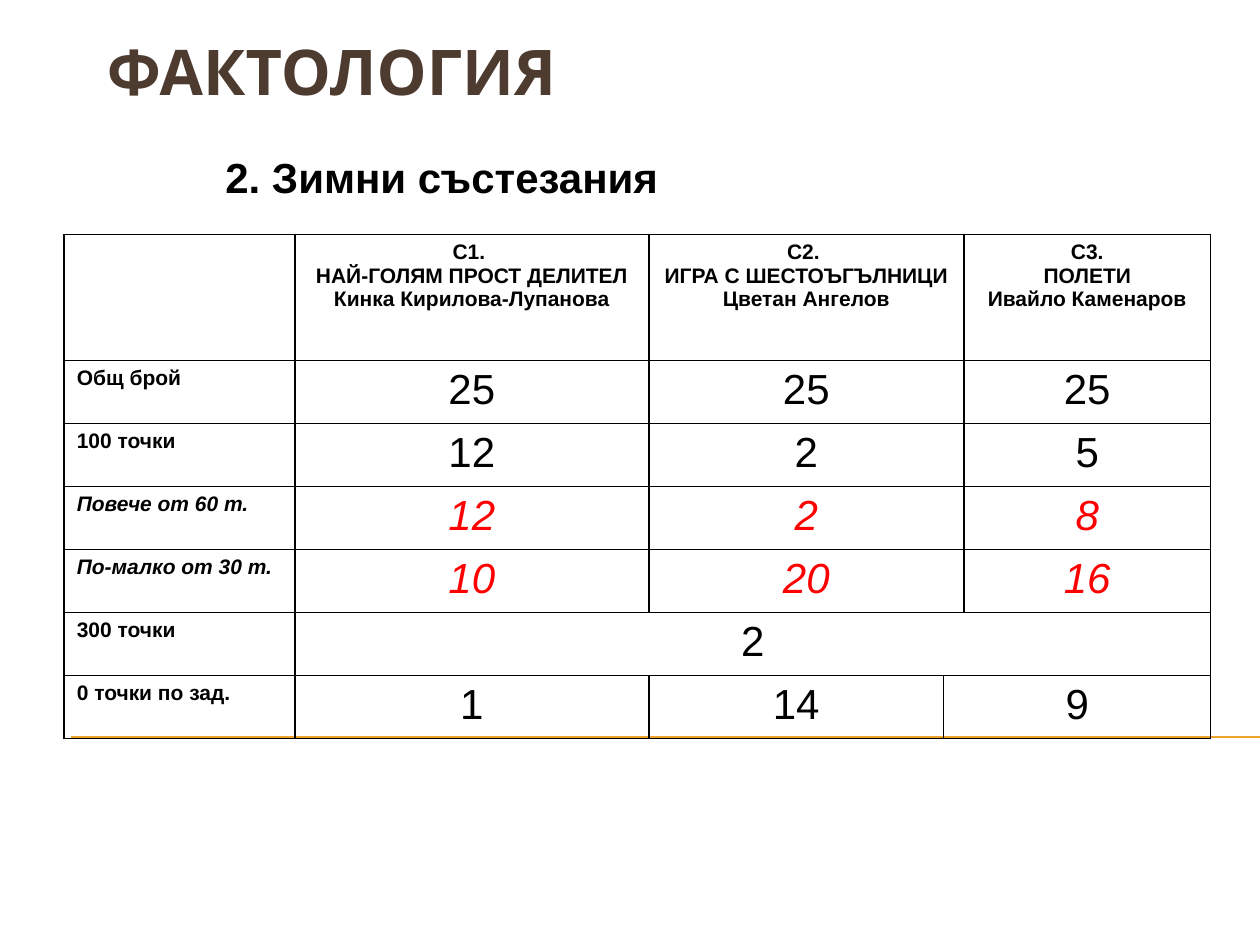
from lxml.etree import SubElement
from pptx import Presentation
from pptx.dml.color import RGBColor
from pptx.enum.shapes import MSO_CONNECTOR as Connector
from pptx.enum.text import MSO_ANCHOR as Anchor, PP_ALIGN as Align
from pptx.oxml.ns import qn
from pptx.util import Inches, Pt


def color(value):
    return RGBColor.from_string(value)


def write(frame, lines, text_color="000000", align=Align.LEFT, **formats):
    for index, line in enumerate(lines):
        paragraph = frame.add_paragraph() if index else frame.paragraphs[0]
        paragraph.alignment = align
        run = paragraph.add_run()
        run.text = line
        run.font.color.rgb = color(text_color)
        for name, value in formats.items():
            setattr(run.font, name, value)


presentation = Presentation()
presentation.slide_width, presentation.slide_height = Inches(10), Inches(7.5)
slide = presentation.slides.add_slide(presentation.slide_layouts[6])
slide.background.fill.solid()
slide.background.fill.fore_color.rgb = color("FFFFFF")

# Rule behind the table
rule = slide.shapes.add_connector(
    Connector.STRAIGHT, Inches(0.56), Inches(5.85), Inches(10), Inches(5.85))
rule.line.color.rgb = color("F0A22E")
rule.line.width = Pt(0.75)
SubElement(rule.line._get_or_add_ln().getparent(), qn("a:effectLst"))

# Title and subtitle
headings = [
    ("ФАКТОЛОГИЯ", (0.75, 0.21, 8.66, 1.02), True, Anchor.TOP, "4E3B30",
     {"name": "Karla", "size": Pt(36), "bold": True}),
    ("2. Зимни състезания", (1.69, 1.15, 3.67, 0.51), False, Anchor.MIDDLE, "000000",
     {"name": "Arial", "size": Pt(24), "bold": True}),
]
for text, box, wrap, anchor, text_color, formats in headings:
    shape = slide.shapes.add_textbox(*map(Inches, box))
    shape.text_frame.word_wrap = wrap
    shape.text_frame.vertical_anchor = anchor
    write(shape.text_frame, [text], text_color, **formats)

# Results table: the narrow fourth column shifts the divider in the last row
column_widths = [1.83, 2.81, 2.34, 0.16, 1.96]
row_heights = [1] + [0.5] * 6
tasks = {
    1: ["С1. ", "НАЙ-ГОЛЯМ ПРОСТ ДЕЛИТЕЛ", "Кинка Кирилова-Лупанова"],
    2: ["С2. ", "ИГРА С ШЕСТОЪГЪЛНИЦИ", "Цветан Ангелов"],
    4: ["С3.", "ПОЛЕТИ", "Ивайло Каменаров"],
}
results = [
    ("Общ брой", {1: "25", 2: "25", 4: "25"}, False),
    ("100 точки", {1: "12", 2: "2", 4: "5"}, False),
    ("Повече от 60 т.", {1: "12", 2: "2", 4: "8"}, True),
    ("По-малко от 30 т.", {1: "10", 2: "20", 4: "16"}, True),
    ("300 точки", {1: "2"}, False),
    ("0 точки по зад.", {1: "1", 2: "14", 3: "9"}, False),
]
table = slide.shapes.add_table(
    len(row_heights), len(column_widths), Inches(0.51), Inches(1.86),
    Inches(sum(column_widths)), Inches(sum(row_heights))).table
table.first_row = table.horz_banding = False
for column, width in zip(table.columns, column_widths):
    column.width = Inches(width)
for row, height in zip(table.rows, row_heights):
    row.height = Inches(height)

# Cell borders, then white-free fill
for cell in table.iter_cells():
    properties = cell._tc.get_or_add_tcPr()
    for side in ("a:lnL", "a:lnR", "a:lnT", "a:lnB"):
        border = SubElement(properties, qn(side), w=str(Pt(1)))
        fill = SubElement(border, qn("a:solidFill"))
        SubElement(fill, qn("a:srgbClr"), val="000000")
    cell.fill.background()

# Merged cells
for row in range(5):
    table.cell(row, 2).merge(table.cell(row, 3))
table.cell(5, 1).merge(table.cell(5, 4))
table.cell(6, 3).merge(table.cell(6, 4))

# Cell texts
label_format = {"name": "Arial", "size": Pt(12), "bold": True}
value_format = {"name": "Arial", "size": Pt(24), "bold": False}
for column, lines in tasks.items():
    write(table.cell(0, column).text_frame, lines, align=Align.CENTER, **label_format)
for row, (label, values, highlighted) in enumerate(results, start=1):
    write(table.cell(row, 0).text_frame, [label], italic=highlighted, **label_format)
    for column, value in values.items():
        write(table.cell(row, column).text_frame, [value],
              "FF0000" if highlighted else "000000", Align.CENTER,
              italic=highlighted, **value_format)

presentation.save("out.pptx")
